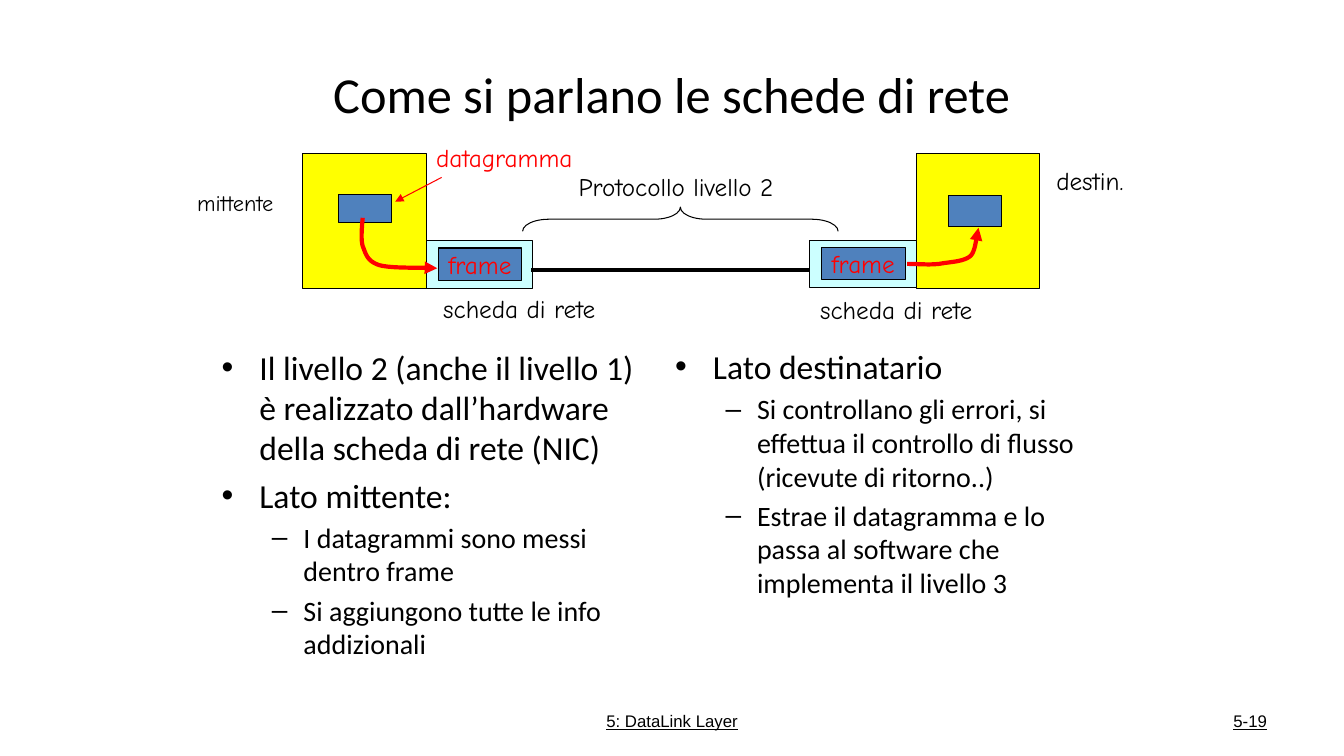
"""Build the slide on how network cards talk to each other."""
import pptx
import pptx.dml.color
import pptx.enum.shapes
import pptx.enum.text
import pptx.oxml
import pptx.oxml.ns
import pptx.util

Cm = pptx.util.Cm
Pt = pptx.util.Pt
RGBColor = pptx.dml.color.RGBColor
SHAPE = pptx.enum.shapes.MSO_SHAPE
ALIGN = pptx.enum.text.PP_ALIGN
ANCHOR = pptx.enum.text.MSO_ANCHOR

BLACK = RGBColor(0x00, 0x00, 0x00)
RED = RGBColor(0xFF, 0x00, 0x00)
YELLOW = RGBColor(0xFF, 0xFF, 0x00)
BLUE = RGBColor(0x4F, 0x81, 0xBD)
CYAN = RGBColor(0xCC, 0xFF, 0xFF)

HAND_FONT = "Comic Neue"
CURVE_STEPS = 12

LEFT_ITEMS = [
    (0, "Il livello 2 (anche il livello 1) è realizzato dall’hardware della scheda di rete (NIC)"),
    (0, "Lato mittente:"),
    (1, "I datagrammi sono messi dentro frame"),
    (1, "Si aggiungono tutte le info addizionali"),
]
RIGHT_ITEMS = [
    (0, "Lato destinatario"),
    (1, "Si controllano gli errori, si effettua il controllo di flusso (ricevute di ritorno..)"),
    (1, "Estrae il datagramma e lo passa al software che implementa il livello 3"),
]
SENDER_CURVE = [
    (9.14, 5.49), (9.12, 5.74), (9.09, 6.02), (9.14, 6.2), (9.22, 6.4),
    (9.25, 6.58), (9.55, 6.68), (9.88, 6.78), (10.77, 6.73), (11.02, 6.76),
]
RECEIVER_CURVE = [
    (22.86, 6.65), (23.14, 6.65), (23.39, 6.68), (23.67, 6.65), (23.93, 6.6),
    (24.28, 6.6), (24.46, 6.45), (24.61, 6.3), (24.61, 5.84), (24.66, 5.74),
]


def place(sp, left, top, width, height):
    """Move and size a shape, in centimetres."""
    sp.left, sp.top, sp.width, sp.height = Cm(left), Cm(top), Cm(width), Cm(height)


def set_font(p, name, size, color=BLACK):
    """Format a whole paragraph."""
    p.font.name = name
    p.font.size = Pt(size)
    p.font.color.rgb = color


def set_line(sp, color, width, arrow=False):
    """Format an outline, with an arrowhead at its end if wanted."""
    sp.line.color.rgb = color
    sp.line.width = Pt(width)
    if arrow:
        tail = pptx.oxml.parse_xml(
            f'<a:tailEnd {pptx.oxml.ns.nsdecls("a")} type="triangle"/>')
        sp.line._get_or_add_ln().append(tail)


def add_title(s, text):
    """Fill the title placeholder."""
    sp = s.shapes.title
    place(sp, 1.69, 0.76, 30.48, 3.18)
    sp.text_frame.text = text
    p = sp.text_frame.paragraphs[0]
    p.alignment = ALIGN.CENTER
    set_font(p, "Calibri", 36)


def add_list(sp, box, items):
    """Fill a body placeholder with a two-level list."""
    place(sp, *box)
    tf = sp.text_frame
    tf.auto_size = pptx.enum.text.MSO_AUTO_SIZE.NONE
    for i, (level, text) in enumerate(items):
        p = tf.paragraphs[0] if i == 0 else tf.add_paragraph()
        p.text = text
        p.level = level
        if i == 0:
            p.space_before = Pt(0)
        set_font(p, "Calibri", 20 if level else 24)


def add_footer(s, text, box, align):
    """Add an underlined footer text."""
    sp = s.shapes.add_textbox(*map(Cm, box))
    tf = sp.text_frame
    tf.word_wrap = True
    tf.vertical_anchor = ANCHOR.MIDDLE
    p = tf.paragraphs[0]
    p.text = text
    p.alignment = align
    set_font(p, "Arial", 12)
    p.font.underline = True


def add_label(s, text, box, size=18, color=BLACK):
    """Add a one-line diagram label."""
    sp = s.shapes.add_textbox(*map(Cm, box))
    tf = sp.text_frame
    tf.word_wrap = False
    tf.auto_size = pptx.enum.text.MSO_AUTO_SIZE.SHAPE_TO_FIT_TEXT
    p = tf.paragraphs[0]
    p.text = text
    set_font(p, HAND_FONT, size, color)


def add_box(shapes, box, fill, text=None):
    """Add an outlined rectangle, with red centred text if given."""
    sp = shapes.add_shape(SHAPE.RECTANGLE, *map(Cm, box))
    sp.shadow.inherit = False
    sp.fill.solid()
    sp.fill.fore_color.rgb = fill
    set_line(sp, BLACK, 0.75)
    if text:
        tf = sp.text_frame
        tf.word_wrap = False
        tf.vertical_anchor = ANCHOR.MIDDLE
        p = tf.paragraphs[0]
        p.text = text
        p.alignment = ALIGN.CENTER
        set_font(p, HAND_FONT, 18, RED)


def add_card(s, left, top):
    """Add a network card holding a frame, as one group."""
    group = s.shapes.add_group_shape()
    add_box(group.shapes, (left, top, 2.69, 1.19), CYAN)
    add_box(group.shapes, (left + 0.3, top + 0.18, 2.11, 0.81), BLUE, "frame")


def add_host(s, left, datagram):
    """Add a host and the datagram inside it."""
    add_box(s.shapes, (left, 3.86, 3.12, 3.4), YELLOW)
    add_box(s.shapes, datagram, BLUE)


def add_line(s, start, end, color, width, arrow=False):
    """Add a straight connector between two points."""
    sp = s.shapes.add_connector(
        pptx.enum.shapes.MSO_CONNECTOR.STRAIGHT, *map(Cm, start + end))
    set_line(sp, color, width, arrow)
    sp._element.spPr.append(
        pptx.oxml.parse_xml(f'<a:effectLst {pptx.oxml.ns.nsdecls("a")}/>'))


def bezier(a, b, c, d, t):
    """Return the point at t on a cubic curve, in lengths."""
    u = 1 - t
    weights = (u ** 3, 3 * u * u * t, 3 * u * t * t, t ** 3)
    return tuple(Cm(sum(w * q[k] for w, q in zip(weights, (a, b, c, d))))
                 for k in (0, 1))


def add_curved_arrow(s, knots):
    """Add a thick red arrow along joined cubic curves."""
    points = [bezier(*knots[i:i + 4], step / CURVE_STEPS)
              for i in range(0, len(knots) - 1, 3)
              for step in range(1, CURVE_STEPS + 1)]
    builder = s.shapes.build_freeform(*map(Cm, knots[0]))
    builder.add_line_segments(points, close=False)
    sp = builder.convert_to_shape()
    sp.shadow.inherit = False
    sp.fill.background()
    set_line(sp, RED, 3, arrow=True)


def add_brace(s, box):
    """Add a brace turned to open downwards."""
    sp = s.shapes.add_shape(SHAPE.LEFT_BRACE, *map(Cm, box))
    sp.shadow.inherit = False
    sp.rotation = 90
    sp.adjustments[0] = 1.08
    sp.fill.background()
    set_line(sp, BLACK, 0.75)


def main():
    """Build and save the slide."""
    prs = pptx.Presentation()
    prs.slide_width, prs.slide_height = Cm(33.87), Cm(19.05)
    s = prs.slides.add_slide(prs.slide_layouts.get_by_name("Two Content"))
    add_title(s, "Come si parlano le schede di rete")
    add_list(s.placeholders[1], (5.33, 8.61, 11.3, 8.41), LEFT_ITEMS)
    add_list(s.placeholders[2], (16.76, 8.59, 11.35, 8.31), RIGHT_ITEMS)
    add_footer(s, "5: DataLink Layer", (11.58, 17.65, 10.72, 1.02), ALIGN.CENTER)
    add_footer(s, "5-19", (24.28, 17.65, 7.9, 1.02), ALIGN.RIGHT)
    add_label(s, "mittente", (4.72, 4.65, 2.82, 0.94), size=16)
    add_card(s, 10.74, 6.07)
    add_line(s, (13.39, 6.81), (20.42, 6.81), BLACK, 3)
    add_host(s, 23.09, (23.9, 4.93, 1.35, 0.79))
    add_host(s, 7.62, (8.53, 4.9, 1.35, 0.71))
    add_label(s, "destin.", (26.37, 4.04, 2.51, 1.02))
    add_line(s, (11.13, 4.47), (9.96, 5.08), RED, 0.75, arrow=True)
    add_label(s, "datagramma", (10.74, 3.45, 4.11, 1.02), color=RED)
    add_curved_arrow(s, SENDER_CURVE)
    add_card(s, 20.4, 6.05)
    add_label(s, "scheda di rete", (10.92, 7.26, 4.8, 1.02))
    add_label(s, "scheda di rete", (20.42, 7.29, 4.8, 1.02))
    add_brace(s, (16.84, 1.55, 0.61, 7.95))
    add_label(s, "Protocollo livello 2", (14.33, 4.19, 5.92, 1.02))
    add_curved_arrow(s, RECEIVER_CURVE)
    prs.save("out.pptx")


if __name__ == "__main__":
    main()
